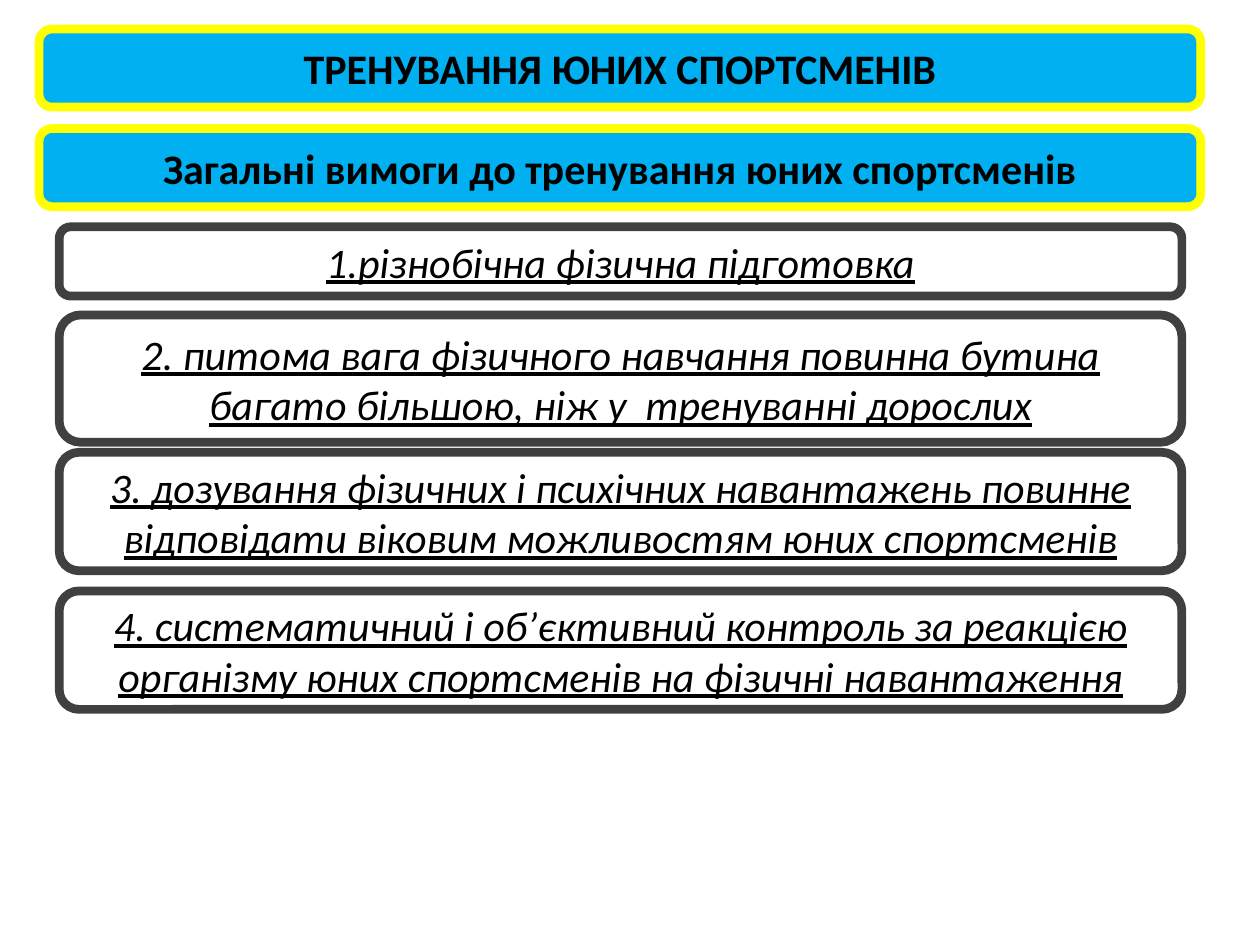
"""Build a slide on the general requirements for training young athletes."""
import pptx
import pptx.dml.color
import pptx.enum.shapes
import pptx.enum.text
import pptx.util
from pptx.util import Inches

BLACK = pptx.dml.color.RGBColor(0x00, 0x00, 0x00)
WHITE = pptx.dml.color.RGBColor(0xFF, 0xFF, 0xFF)
BLUE = pptx.dml.color.RGBColor(0x00, 0xB0, 0xF0)
YELLOW = pptx.dml.color.RGBColor(0xFF, 0xFF, 0x00)
GRAY = pptx.dml.color.RGBColor(0x40, 0x40, 0x40)

HEADINGS = [
    (0.23, 0.62, "ТРЕНУВАННЯ ЮНИХ СПОРТСМЕНІВ"),
    (1.02, 0.62, "Загальні вимоги до тренування юних спортсменів"),
]
REQUIREMENTS = [
    (1.8, 0.55, "1.різнобічна фізична підготовка"),
    (2.5, 1.01, "2. питома вага фізичного навчання повинна бутина "
                "багато більшою, ніж у  тренуванні дорослих"),
    (3.59, 0.94, "3. дозування фізичних і психічних навантажень повинне "
                 "відповідати віковим можливостям юних спортсменів"),
    (4.69, 0.94, "4. систематичний і об’єктивний контроль за реакцією "
                 "організму юних спортсменів на фізичні навантаження"),
]

presentation = pptx.Presentation()
presentation.slide_width = Inches(10)
presentation.slide_height = Inches(7.5)
slide = presentation.slides.add_slide(presentation.slide_layouts[6])


def add_box(left, top, width, height, text, fill_color, line_color):
    shape = slide.shapes.add_shape(
        pptx.enum.shapes.MSO_SHAPE.ROUNDED_RECTANGLE,
        Inches(left), Inches(top), Inches(width), Inches(height))
    shape.shadow.inherit = False
    shape.fill.solid()
    shape.fill.fore_color.rgb = fill_color
    shape.line.color.rgb = line_color
    shape.line.width = pptx.util.Pt(5)
    text_frame = shape.text_frame
    text_frame.word_wrap = True
    text_frame.vertical_anchor = pptx.enum.text.MSO_ANCHOR.MIDDLE
    paragraph = text_frame.paragraphs[0]
    paragraph.alignment = pptx.enum.text.PP_ALIGN.CENTER
    run = paragraph.add_run()
    run.text = text
    run.font.name = "Calibri"
    run.font.size = pptx.util.Pt(24)
    run.font.color.rgb = BLACK
    return run


for top, height, text in HEADINGS:
    run = add_box(0.31, top, 9.22, height, text, BLUE, YELLOW)
    run.font.bold = True

for top, height, text in REQUIREMENTS:
    run = add_box(0.47, top, 8.91, height, text, WHITE, GRAY)
    run.font.italic = True
    run.font.underline = True

presentation.save("out.pptx")
